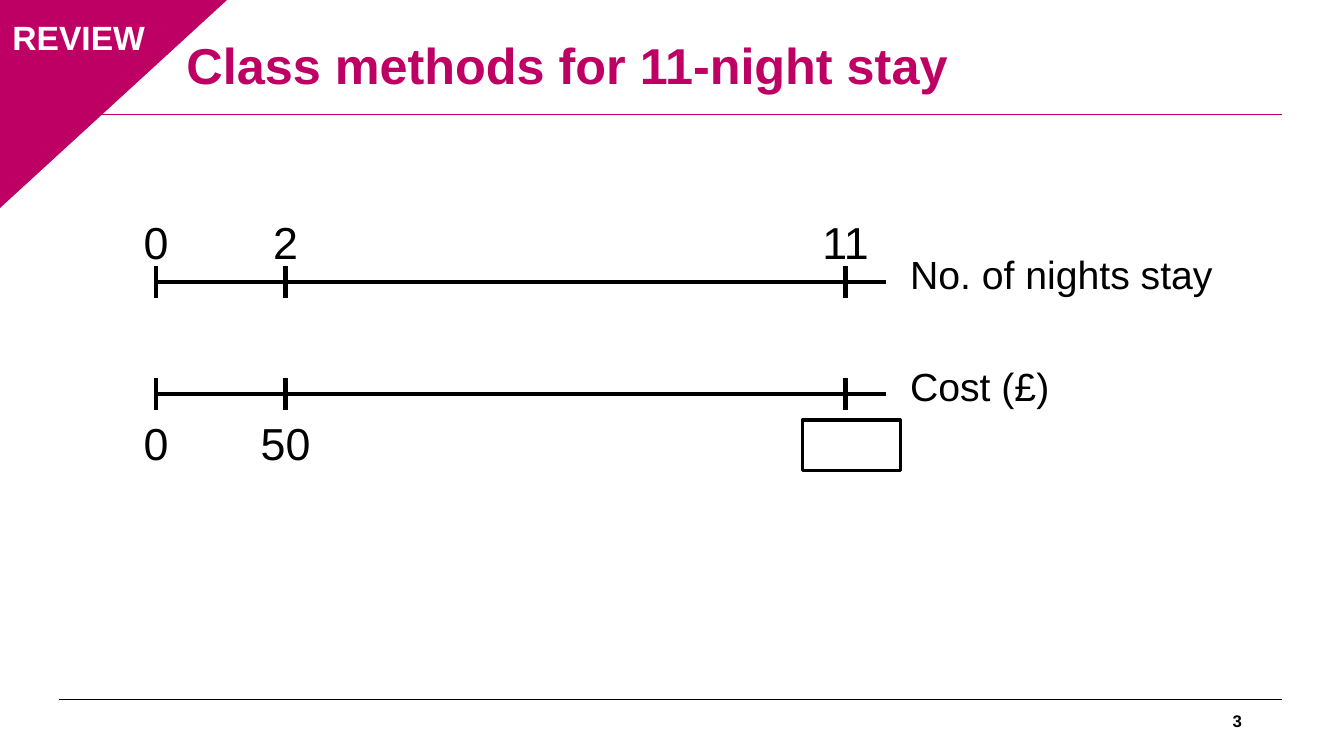
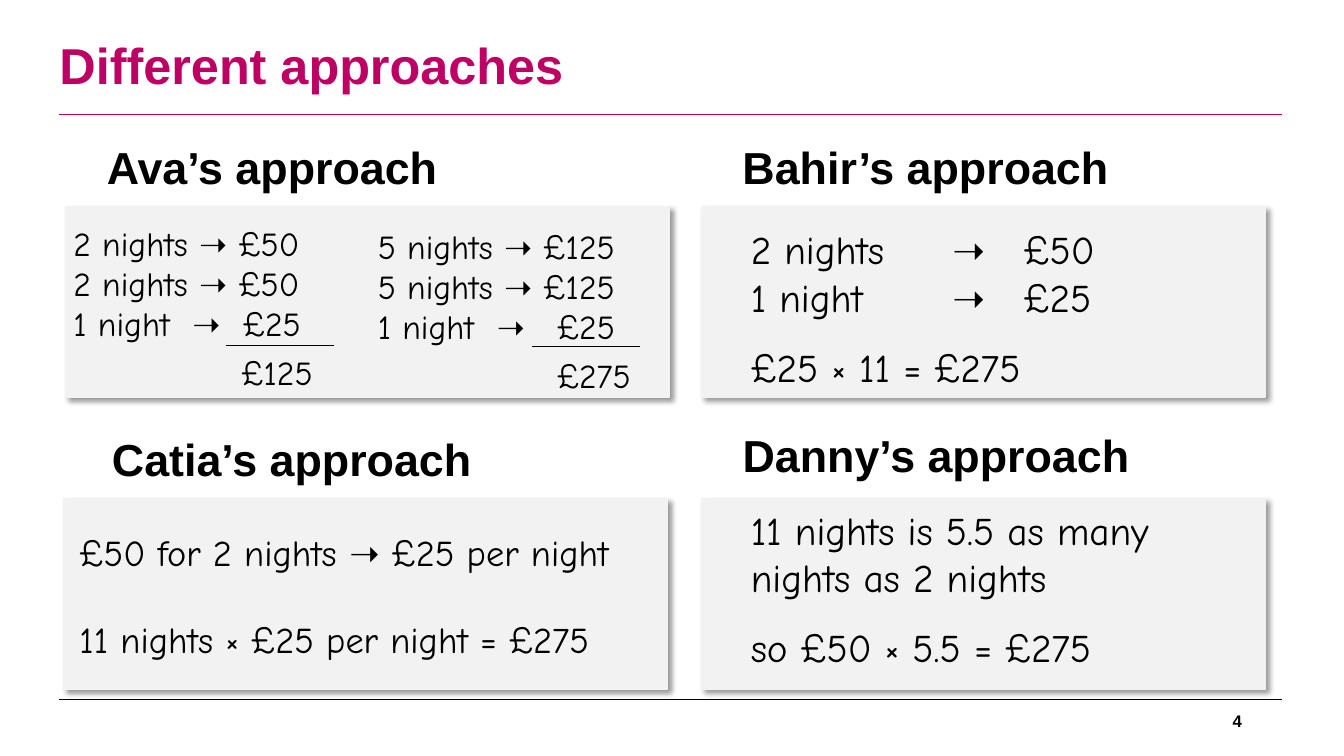
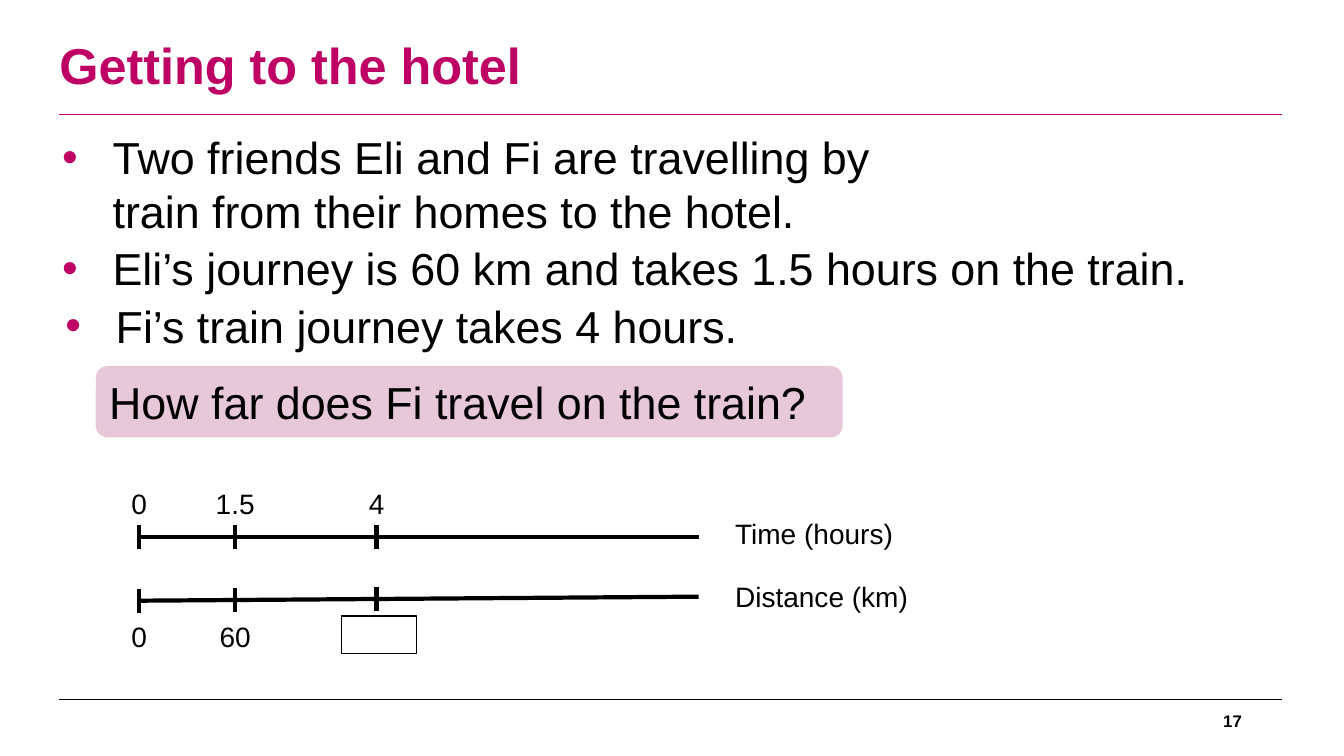
from lxml.etree import SubElement
from pptx import Presentation
from pptx.dml.color import RGBColor
from pptx.enum.shapes import MSO_CONNECTOR, MSO_SHAPE
from pptx.enum.text import MSO_ANCHOR, MSO_AUTO_SIZE, PP_ALIGN
from pptx.oxml.ns import qn
from pptx.util import Pt

COLORS = {"accent": "BE0064", "tint": "E6C8D9", "panel": "F2F2F2",
          "black": "000000", "white": "FFFFFF"}
BODY, HAND = "Arial", "Comic Neue"
MARGIN_LEFT, MARGIN_RIGHT = 42.5, 916

# Rects are (left, top, width, height) in points.
NIGHTS = {
    "start": 111, "end": 633, "ticks": (111.5, 204, 604), "half_tick": 11.5,
    "size": 32, "caption_size": 28, "caption_left": 643, "caption_rise": 26,
    "above": 52, "below": 12, "answer": (573, 300, 70, 36), "answer_line": 2.25,
    "scales": [
        {"y": 201.6, "rise": 0, "labels": ("0", "2", "11"),
         "caption": "No. of nights stay", "labels_above": True},
        {"y": 281.6, "rise": 0, "labels": ("0", "50"),
         "caption": "Cost (£)", "labels_above": False},
    ],
}
JOURNEY = {
    "start": 98.6, "end": 499, "ticks": (99.4, 168, 269), "half_tick": 8.6,
    "size": 20, "caption_size": 20, "caption_left": 518, "caption_rise": 18.5,
    "above": 39.5, "below": 9.5, "answer": (244, 440, 53.5, 27), "answer_line": 1,
    "scales": [
        {"y": 383.8, "rise": 0, "labels": ("0", "1.5", "4"),
         "caption": "Time (hours)", "labels_above": True},
        {"y": 429.1, "rise": 2.9, "labels": ("0", "60"),
         "caption": "Distance (km)", "labels_above": False},
    ],
}

PANEL_HEIGHT, HEADING_HEIGHT = 136, 51
# Each text: rect, size, then paragraphs of (text, paragraph format).
APPROACHES = [
    {"heading": "Ava’s approach", "heading_at": (45.4, 93.6, 298),
     "panel": (46.8, 147.6, 431.3),
     "texts": [
         ((45.4, 155.5, 227, 130), 24, [
             ("2 nights ➝ £50", {}), ("2 nights ➝ £50", {}),
             ("1 night\t➝\t£25", {"tabs": (85, 121)}),
             ("\t£125", {"tabs": (120,), "before": 6})]),
         ((262.8, 157.7, 227, 130), 24, [
             ("5 nights ➝ £125", {}), ("5 nights ➝ £125", {}),
             ("1 night\t➝\t£25", {"tabs": (85, 128)}),
             ("\t£275", {"tabs": (128,), "before": 6})])],
     "sum_lines": [(161.3, 247), (380.2, 247.7)]},
    {"heading": "Bahir’s approach", "heading_at": (501, 93.6, 320.4),
     "panel": (501, 147.6, 402.5),
     "texts": [((529.2, 157.7, 374.4, 120), 28, [
         ("2 nights\t➝\t£50", {"tabs": (144, 195)}),
         ("1 night\t➝\t£25", {"tabs": (144, 195)}),
         ("£25 × 11 = £275", {"spacing": 1.5})])]},
    {"heading": "Catia’s approach", "heading_at": (45.4, 302.4, 326.2),
     "panel": (45.4, 356.4, 431.3),
     "texts": [((49.7, 375, 444, 93), 26, [
         ("£50 for 2 nights ➝ £25 per night", {}),
         ("11 nights × £25 per night = £275", {"spacing": 2.0})])]},
    {"heading": "Danny’s approach", "heading_at": (501, 299.5, 335.5),
     "panel": (501, 356.4, 402.5),
     "texts": [((529.2, 357.8, 374.4, 120), 28, [
         ("11 nights is 5.5 as many nights as 2 nights", {}),
         ("so £50 × 5.5 = £275", {"spacing": 1.5})])]},
]
SUM_LINE_LENGTH = 77

BULLETS = [
    ("Two friends Eli and Fi are travelling by train from their homes to the hotel.",
     (37.4, 89.3, 604.8, 124)),
    ("Eli’s journey is 60 km and takes 1.5 hours on the train.", (37.4, 168.5, 839, 46)),
    ("Fi’s train journey takes 4 hours.", (39.6, 209.5, 878, 46)),
]
QUESTION = ("How far does Fi travel on the train?", (68.4, 261.4, 533.5, 51))


def rgb(name):
    return RGBColor.from_string(COLORS[name])


def add_line(s, x1, y1, x2, y2, width, color="black"):
    line = s.shapes.add_connector(MSO_CONNECTOR.STRAIGHT, Pt(x1), Pt(y1), Pt(x2), Pt(y2))
    line.line.color.rgb = rgb(color)
    line.line.width = Pt(width)
    SubElement(line._element.spPr, qn("a:effectLst"))
    return line


def add_box(s, kind, rect, fill=None, line=None, width=1):
    sp = s.shapes.add_shape(kind, *map(Pt, rect))
    sp.shadow.inherit = False
    if fill:
        sp.fill.solid()
        sp.fill.fore_color.rgb = rgb(fill)
    else:
        sp.fill.background()
    if line:
        sp.line.color.rgb = rgb(line)
        sp.line.width = Pt(width)
    else:
        sp.line.fill.background()
    return sp


def format_paragraph(p, size, font=BODY, color="black", bold=False,
                     align=PP_ALIGN.LEFT, spacing=None, before=None, tabs=()):
    p.alignment = align
    if spacing:
        p.line_spacing = spacing
    if before:
        p.space_before = Pt(before)
    if tabs:
        tab_list = SubElement(p._p.get_or_add_pPr(), qn("a:tabLst"))
        for stop in tabs:
            SubElement(tab_list, qn("a:tab"), pos=str(int(Pt(stop))), algn="l")
    for r in p.runs:
        r.font.name, r.font.size, r.font.bold = font, Pt(size), bold
        r.font.color.rgb = rgb(color)


def write(sp, text, size, anchor=MSO_ANCHOR.TOP, **style):
    """Put a single formatted paragraph in a shape and return it."""
    tf = sp.text_frame
    tf.word_wrap = True
    tf.auto_size = MSO_AUTO_SIZE.NONE
    tf.vertical_anchor = anchor
    tf.text = text
    format_paragraph(tf.paragraphs[0], size, **style)
    return tf.paragraphs[0]


def add_text(s, rect, text, size, **style):
    return write(s.shapes.add_textbox(*map(Pt, rect)), text, size, **style)


def add_slide(prs, title, number, title_left=35.3):
    """Add a slide with its title, two rules and slide number."""
    s = prs.slides.add_slide(prs.slide_layouts[5])
    sp = s.shapes.title
    sp.left, sp.top, sp.width, sp.height = map(Pt, (title_left, 8.6, 720, 80))
    write(sp, title, 36, MSO_ANCHOR.MIDDLE, color="accent", bold=True, spacing=0.9)
    add_line(s, MARGIN_LEFT, 499.8, MARGIN_RIGHT, 499.8, 1)
    add_line(s, MARGIN_LEFT, 82, MARGIN_RIGHT, 82, 0.75, "accent")
    add_text(s, (678.2, 500.4, 216, 28.8), number, 12, anchor=MSO_ANCHOR.MIDDLE,
             bold=True, align=PP_ALIGN.RIGHT)
    return s


def add_review_corner(s):
    corner = add_box(s, MSO_SHAPE.ISOSCELES_TRIANGLE, (-2, -1.4, 165, 151.2),
                     "accent", "accent")
    corner.adjustments[0] = 0
    corner._element.spPr.get_or_add_xfrm().set("flipV", "1")
    tag = add_box(s, MSO_SHAPE.RECTANGLE, (0.7, 8.6, 111, 31.7), "accent", "accent", 0.75)
    write(tag, "REVIEW", 24, color="white", bold=True, align=PP_ALIGN.CENTER)


def add_double_number_line(s, d):
    start, end, half = d["start"], d["end"], d["half_tick"]
    label_width, label_height = 72, d["size"] * 1.45
    for scale in d["scales"]:
        y, rise = scale["y"], scale["rise"]
        add_line(s, start, y, end, y - rise, 3)
        for x in d["ticks"]:
            middle = y - rise * (x - start) / (end - start)
            add_line(s, x, middle - half, x, middle + half, 3)
        top = y - d["above"] if scale["labels_above"] else y + d["below"]
        for x, label in zip(d["ticks"], scale["labels"]):
            add_text(s, (x - label_width / 2, top, label_width, label_height),
                     label, d["size"], align=PP_ALIGN.CENTER)
        add_text(s, (d["caption_left"], y - d["caption_rise"], 268, d["caption_size"] * 1.45),
                 scale["caption"], d["caption_size"])
    add_box(s, MSO_SHAPE.RECTANGLE, d["answer"], line="black", width=d["answer_line"])


def add_panel(s, rect):
    sp = add_box(s, MSO_SHAPE.RECTANGLE, rect, "panel", "panel")
    effects = sp._element.spPr.find(qn("a:effectLst"))
    shadow = SubElement(effects, qn("a:outerShdw"), blurRad=str(int(Pt(4))),
                        dist=str(int(Pt(3))), dir="2700000", algn="tl", rotWithShape="0")
    color = SubElement(shadow, qn("a:srgbClr"), val=COLORS["black"])
    SubElement(color, qn("a:alpha"), val="40000")


def add_approach(s, a):
    add_panel(s, (*a["panel"], PANEL_HEIGHT))
    heading = add_box(s, MSO_SHAPE.ROUNDED_RECTANGLE,
                      (*a["heading_at"], HEADING_HEIGHT), "white")
    write(heading, a["heading"], 32, MSO_ANCHOR.MIDDLE, bold=True, align=PP_ALIGN.CENTER)
    for rect, size, paragraphs in a["texts"]:
        tf = s.shapes.add_textbox(*map(Pt, rect)).text_frame
        tf.word_wrap = True
        for i, (text, style) in enumerate(paragraphs):
            p = tf.add_paragraph() if i else tf.paragraphs[0]
            p.text = text
            format_paragraph(p, size, HAND, **style)
    for x, y in a.get("sum_lines", ()):
        add_line(s, x, y, x + SUM_LINE_LENGTH, y, 1)


def add_bullet(s, text, rect):
    pPr = add_text(s, rect, text, 32)._p.get_or_add_pPr()
    pPr.set("marL", str(int(Pt(36))))
    pPr.set("indent", str(int(Pt(-36))))
    SubElement(SubElement(pPr, qn("a:buClr")), qn("a:srgbClr"), val=COLORS["accent"])
    SubElement(pPr, qn("a:buFont"), typeface=BODY)
    SubElement(pPr, qn("a:buChar"), char="•")


def main():
    prs = Presentation()
    prs.slide_width, prs.slide_height = Pt(960), Pt(540)

    s = add_slide(prs, "Class methods for 11-night stay", "3", title_left=126)
    add_review_corner(s)
    add_double_number_line(s, NIGHTS)

    s = add_slide(prs, "Different approaches", "4")
    for approach in APPROACHES:
        add_approach(s, approach)

    s = add_slide(prs, "Getting to the hotel", "17")
    for text, rect in BULLETS:
        add_bullet(s, text, rect)
    text, rect = QUESTION
    write(add_box(s, MSO_SHAPE.ROUNDED_RECTANGLE, rect, "tint"), text, 32)
    add_double_number_line(s, JOURNEY)

    prs.save("out.pptx")


if __name__ == "__main__":
    main()
